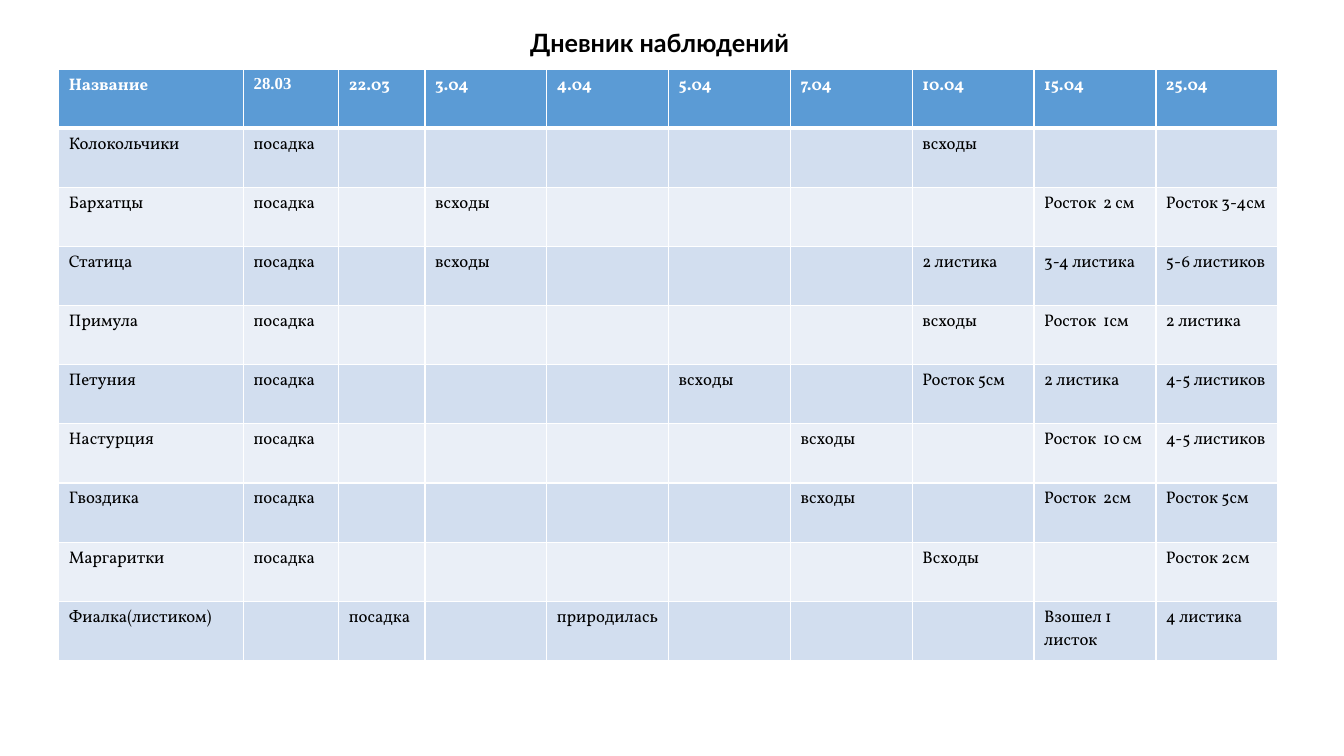
import dataclasses

import lxml.etree
import pptx
import pptx.dml.color
import pptx.enum.text
import pptx.oxml.ns
import pptx.util

Cm = pptx.util.Cm
Pt = pptx.util.Pt


@dataclasses.dataclass(frozen=True)
class Theme:
    black: str = "000000"
    white: str = "FFFFFF"
    head: str = "5B9BD5"
    bands: tuple = ("D2DEEF", "EAEFF7")
    title: int = 18
    body: int = 12
    sans: str = "Lato"
    serif: str = "Vollkorn"
    times: str = "Times New Roman"
    thin: int = 1
    thick: int = 3


class Deck:
    def __init__(self, theme):
        self.theme = theme
        self.file = pptx.Presentation()
        self.file.slide_width = Cm(33.87)
        self.file.slide_height = Cm(19.05)
        self.slide = self.file.slides.add_slide(self.file.slide_layouts[6])

    def color(self, code):
        return pptx.dml.color.RGBColor.from_string(code)

    def add_text(self, para, text, face, size, code, bold):
        run = para.add_run()
        run.text = text
        run.font.name = face
        run.font.size = Pt(size)
        run.font.bold = bold
        run.font.color.rgb = self.color(code)

    def title(self, text, left, top, width, height):
        box = self.slide.shapes.add_textbox(Cm(left), Cm(top), Cm(width), Cm(height))
        frame = box.text_frame
        frame.word_wrap = True
        frame.vertical_anchor = pptx.enum.text.MSO_ANCHOR.TOP
        para = frame.paragraphs[0]
        para.alignment = pptx.enum.text.PP_ALIGN.CENTER
        para.line_spacing = 0.9
        self.add_text(para, text, self.theme.sans, self.theme.title, self.theme.black, True)

    def edge(self, cell, side, width):
        name = pptx.oxml.ns.qn
        props = cell._tc.get_or_add_tcPr()
        line = lxml.etree.SubElement(props, name(f"a:ln{side}"), w=str(Pt(width)))
        fill = lxml.etree.SubElement(line, name("a:solidFill"))
        lxml.etree.SubElement(fill, name("a:srgbClr"), val=self.theme.white)

    def cell(self, cell, row, text, face):
        theme = self.theme
        head = row == 0
        for side in "LRTB":
            heavy = (row, side) in ((0, "B"), (1, "T"))
            self.edge(cell, side, theme.thick if heavy else theme.thin)
        cell.fill.solid()
        cell.fill.fore_color.rgb = self.color(theme.head if head else theme.bands[(row - 1) % 2])
        if text:
            code = theme.white if head else theme.black
            self.add_text(cell.text_frame.paragraphs[0], text, face, theme.body, code, head)

    def table(self, dates, plants, left, top, widths, height):
        rows = [["Название", *dates]]
        rows += [[name, *(notes.get(date, "") for date in dates)] for name, notes in plants.items()]
        frame = self.slide.shapes.add_table(
            len(rows), len(widths), Cm(left), Cm(top), Cm(sum(widths)), Cm(height * len(rows)))
        grid = frame.table
        for col, width in zip(grid.columns, widths):
            col.width = Cm(width)
        for r, texts in enumerate(rows):
            grid.rows[r].height = Cm(height)
            for c, text in enumerate(texts):
                face = self.theme.times if (r, c) == (0, 1) else self.theme.serif
                self.cell(grid.cell(r, c), r, text, face)


DATES = ["28.03", "22.03", "3.04", "4.04", "5.04", "7.04", "10.04", "15.04", "25.04"]
SOWN = {"28.03": "посадка"}
PLANTS = {
    "Колокольчики": {**SOWN, "10.04": "всходы"},
    "Бархатцы": {**SOWN, "3.04": "всходы", "15.04": "Росток  2 см", "25.04": "Росток 3-4см"},
    "Статица": {**SOWN, "3.04": "всходы", "10.04": "2 листика",
                "15.04": "3-4 листика", "25.04": "5-6 листиков"},
    "Примула": {**SOWN, "10.04": "всходы", "15.04": "Росток  1см", "25.04": "2 листика"},
    "Петуния": {**SOWN, "5.04": "всходы", "10.04": "Росток 5см",
                "15.04": "2 листика", "25.04": "4-5 листиков"},
    "Настурция": {**SOWN, "7.04": "всходы", "15.04": "Росток  10 см", "25.04": "4-5 листиков"},
    "Гвоздика": {**SOWN, "7.04": "всходы", "15.04": "Росток  2см", "25.04": "Росток 5см"},
    "Маргаритки": {**SOWN, "10.04": "Всходы", "25.04": "Росток 2см"},
    "Фиалка(листиком)": {"22.03": "посадка", "4.04": "природилась",
                         "15.04": "Взошел 1 листок", "25.04": "4 листика"},
}


def main():
    deck = Deck(Theme())
    deck.title("Дневник наблюдений", 8.99, 0.66, 15.27, 2.34)
    deck.table(DATES, PLANTS, 1.48, 1.74, [4.66, 2.4, 2.17] + [3.07] * 7, 1.49)
    deck.file.save("out.pptx")


if __name__ == "__main__":
    main()
